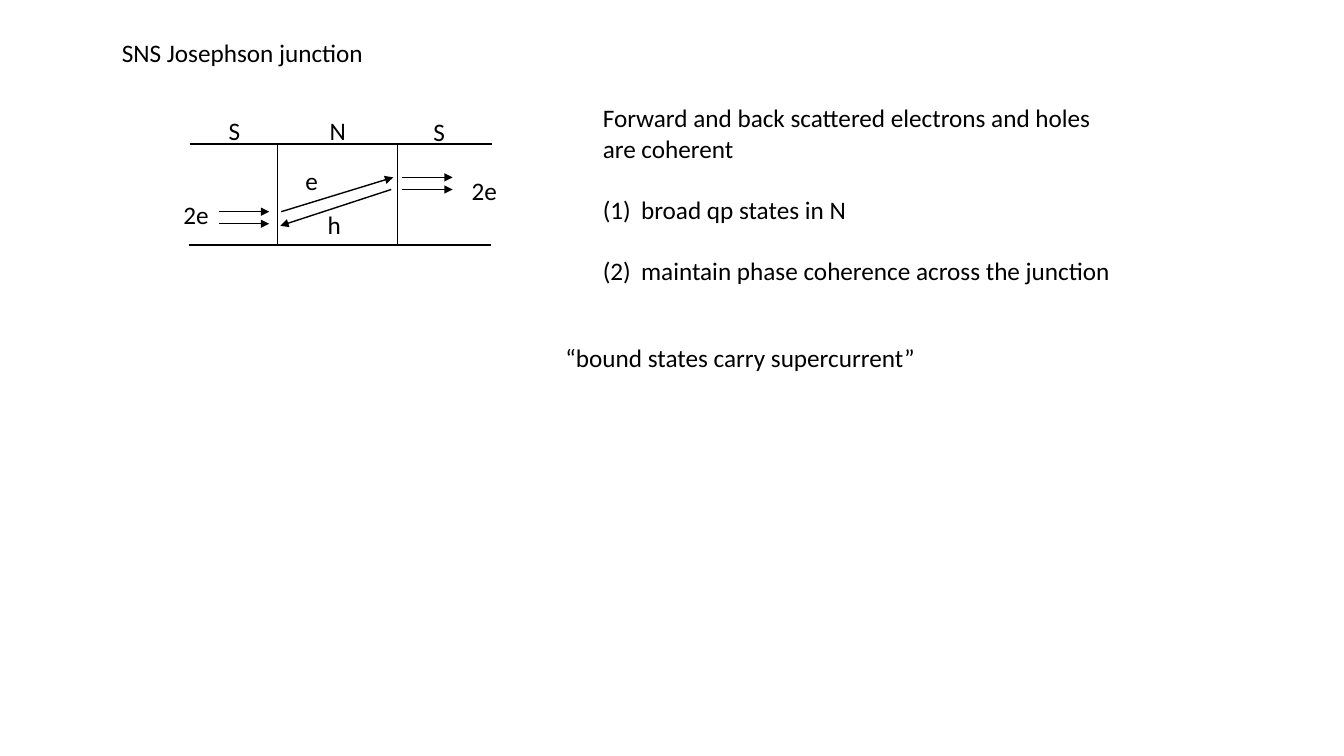
from lxml import etree
from pptx import Presentation
from pptx.dml.color import RGBColor
from pptx.enum.shapes import MSO_CONNECTOR
from pptx.enum.text import MSO_AUTO_SIZE
from pptx.oxml.ns import qn
from pptx.util import Inches, Pt

STRAIGHT = MSO_CONNECTOR.STRAIGHT
GROW = MSO_AUTO_SIZE.SHAPE_TO_FIT_TEXT

# Content
TITLE = "SNS Josephson junction"
CLAIM = "Forward and back scattered electrons and holes are coherent"
POINTS = ["broad qp states in N", "maintain phase coherence across the junction"]
QUOTE = "“bound states carry supercurrent”"
LABELS = [  # text, left, top, width
    ("e", 2.93, 1.59, 0.34),
    ("h", 3.15, 2.03, 0.28),
    ("2e", 4.58, 1.69, 0.49),
    ("2e", 1.72, 1.93, 0.49),
    ("N", 3.17, 1.09, 0.3),
    ("S", 4.2, 1.1, 0.3),
    ("S", 2.17, 1.09, 0.25),
]

# Theme and layout
THEME = {
    "ink": RGBColor(0, 0, 0),
    "font": {"name": "Calibri", "size": Pt(18)},
    "line": Pt(1),
    "gap": Pt(22),
}
ROW = 0.4                   # height of one line of text
TOP, BASE = 1.43, 2.43      # junction edges
WALLS = (2.75, 3.94)        # S-N and N-S interfaces
PAIRS = [(2.17, 2.1), (3.99, 1.76)]  # first arrow of each pair
REACH, STEP = 0.5, 0.12     # arrow length, spacing within a pair
INDENT = 0.38

deck = Presentation()
deck.slide_width, deck.slide_height = Inches(13.33), Inches(7.5)
slide = deck.slides.add_slide(deck.slide_layouts[6])


def style(par):
    for key, value in THEME["font"].items():
        setattr(par.font, key, value)
    par.font.color.rgb = THEME["ink"]


def write(shapes, lines, left, top, width, height=ROW, wrap=True):
    box = shapes.add_textbox(*map(Inches, (left, top, width, height)))
    frame = box.text_frame
    frame.word_wrap = wrap
    frame.auto_size = GROW
    frame.text = "\n".join(lines)
    for par in frame.paragraphs:
        style(par)
    return frame


def draw(shapes, start, end, arrow=False):
    link = shapes.add_connector(STRAIGHT, *map(Inches, start + end))
    link.line.color.rgb = THEME["ink"]
    link.line.width = THEME["line"]
    if arrow:
        etree.SubElement(link.line._get_or_add_ln(), qn("a:tailEnd"), type="triangle")
    etree.SubElement(link._element.spPr, qn("a:effectLst"))


def number(par):
    par.space_before = THEME["gap"]
    props = par._p.get_or_add_pPr()
    props.set("marL", str(Inches(INDENT)))
    props.set("indent", str(-Inches(INDENT)))
    etree.SubElement(props, qn("a:buFont"), typeface="+mj-lt")
    etree.SubElement(props, qn("a:buAutoNum"), type="arabicParenBoth")


# Junction outline
sketch = slide.shapes.add_group_shape().shapes
draw(sketch, (1.88, TOP), (4.88, TOP))
draw(sketch, (1.87, BASE), (4.87, BASE))
for x in WALLS:
    draw(sketch, (x, BASE), (x, TOP))

# Electron and hole paths, then the pairs entering and leaving
draw(sketch, (2.79, 2.1), (3.9, 1.76), True)
draw(sketch, (3.88, 1.88), (2.78, 2.24), True)
for x, y in PAIRS:
    for level in (y, y + STEP):
        draw(sketch, (x, level), (x + REACH, level), True)

# Junction labels
for text, *place in LABELS:
    write(sketch, [text], *place)

# Explanation
notes = write(slide.shapes, [CLAIM] + POINTS, 5.88, 0.97, 5.28, 1.92)
for par in notes.paragraphs[1:]:
    number(par)
write(slide.shapes, [QUOTE], 5.51, 3.35, 4.44)

# Title
write(slide.shapes, [TITLE], 1.11, 0.32, 2.62, wrap=False)

deck.save("out.pptx")
